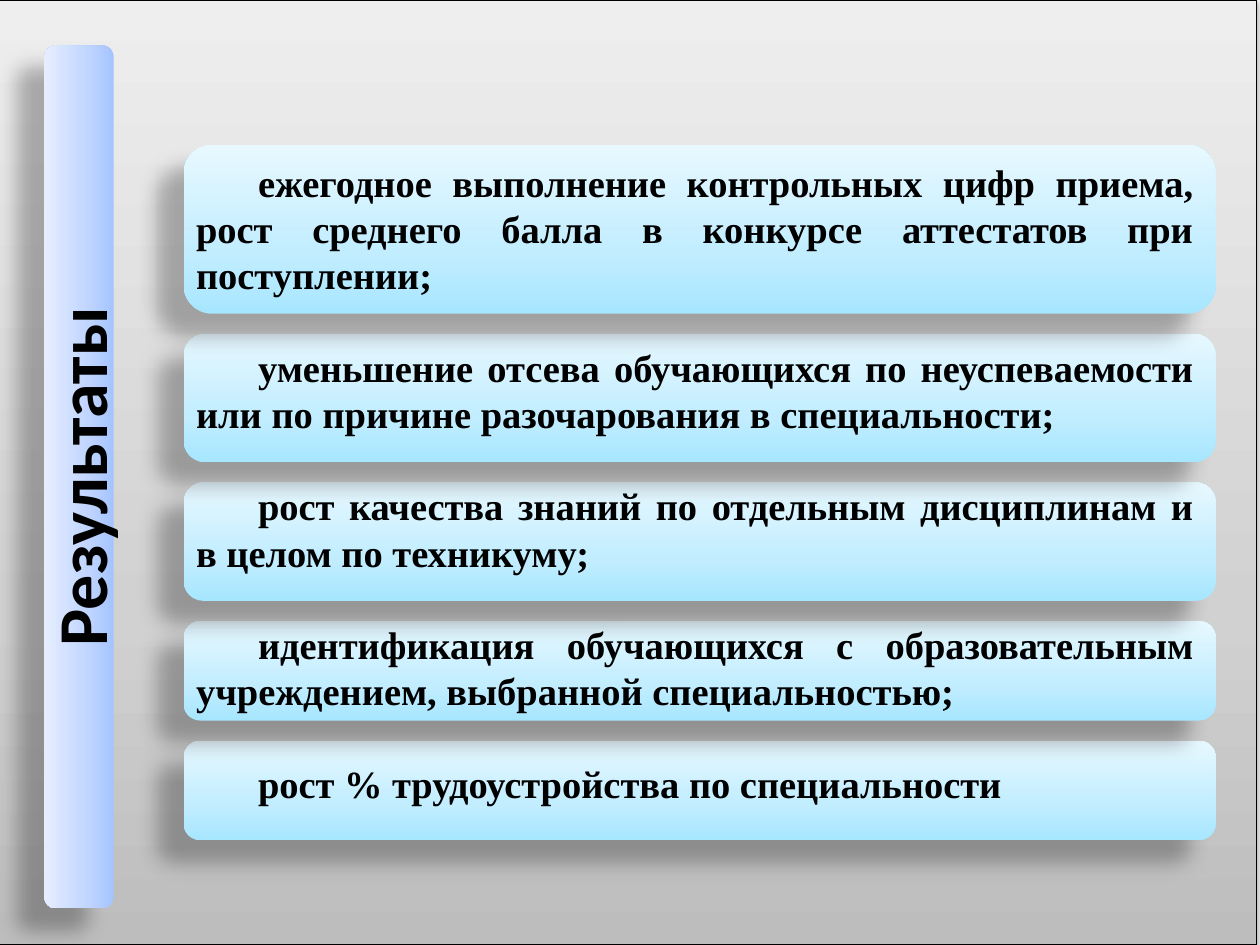
from itertools import accumulate

from lxml import etree
from pptx import Presentation
from pptx import util as u
from pptx.dml.color import RGBColor
from pptx.enum import shapes, text
from pptx.oxml import ns

COLORS = {
    "ink": "000000",
    "page": ("BDBDBD", "D1D1D1", "EEEEEE"),
    "card": ("A7E6FF", "C1EDFF", "E7F8FF"),
    "bar": ("A4C4FF", "BFD4FF", "E6EEFF"),
}
STOPS = (0, 35, 100)
SOFT_SHADOW = {"alpha": 38, "blur": 3.15, "dist": 1.57, "angle": 90}
DEEP_SHADOW = {"alpha": 28, "blur": 11.8, "dist": 19.7, "angle": 141}

TITLE = "Результаты"
RESULTS = (
    "ежегодное выполнение контрольных цифр приема, рост среднего балла "
    "в конкурсе аттестатов при поступлении;",
    "уменьшение отсева обучающихся по неуспеваемости или по причине "
    "разочарования в специальности;",
    "рост качества знаний по отдельным дисциплинам и в целом по техникуму;",
    "идентификация обучающихся с образовательным учреждением, "
    "выбранной специальностью;",
    "рост % трудоустройства по специальности",
)
CARD_LEFT, CARD_TOP, CARD_WIDTH, CARD_GAP = 105, 82.8, 589.7, 11.5
CARD_HEIGHTS = (96.5, 73.4, 67.7, 56.9, 56.9)
LINE_HEIGHT = 26.4


def child(parent, tag, **attributes):
    """Append a DrawingML element, writing each attribute as text."""
    node = etree.SubElement(parent, ns.qn(f"a:{tag}"))
    for name, value in attributes.items():
        node.set(name, str(value))
    return node


def apply_format(target, values):
    for name, value in values.items():
        setattr(target, name, value)


def fill_gradient(shape, colors):
    """Run the three colours from the bottom edge up."""
    gradient = child(shape.element.spPr, "gradFill", rotWithShape=1)
    stops = child(gradient, "gsLst")
    for position, color in zip(STOPS, colors):
        stop = child(stops, "gs", pos=position * 1000)
        child(stop, "srgbClr", val=color)
    child(gradient, "lin", ang=270 * 60000, scaled=0)


def cast_shadow(shape, shadow):
    shape.shadow.inherit = False
    effects = shape.element.spPr.find(ns.qn("a:effectLst"))
    outer = child(effects, "outerShdw",
                  blurRad=int(u.Pt(shadow["blur"])),
                  dist=int(u.Pt(shadow["dist"])),
                  dir=shadow["angle"] * 60000, rotWithShape=0)
    color = child(outer, "srgbClr", val=COLORS["ink"])
    child(color, "alpha", val=shadow["alpha"] * 1000)


def add_panel(page, kind, frame, colors, shadow):
    panel = page.shapes.add_shape(kind, *map(u.Pt, frame))
    fill_gradient(panel, colors)
    panel.line.fill.background()
    cast_shadow(panel, shadow)
    return panel


def write(para, content, font, size, alignment):
    para.alignment = alignment
    span = para.add_run()
    span.text = content
    apply_format(span.font, {"name": font, "size": u.Pt(size), "bold": True})
    span.font.color.rgb = RGBColor.from_string(COLORS["ink"])


def add_backdrop(page):
    backdrop = add_panel(page, shapes.MSO_SHAPE.RECTANGLE,
                         (-1.5, 0, 719.5, 540), COLORS["page"], SOFT_SHADOW)
    backdrop.line.color.rgb = RGBColor.from_string(COLORS["ink"])
    backdrop.line.width = u.Pt(0.75)


def add_cards(page):
    """Stack the cards with equal gaps, the lowest one at the back."""
    steps = (height + CARD_GAP for height in CARD_HEIGHTS[:-1])
    tops = accumulate(steps, initial=CARD_TOP)
    for top, height in reversed(list(zip(tops, CARD_HEIGHTS))):
        add_panel(page, shapes.MSO_SHAPE.ROUNDED_RECTANGLE,
                  (CARD_LEFT, top, CARD_WIDTH, height),
                  COLORS["card"], DEEP_SHADOW)


def add_title_bar(page):
    bar = add_panel(page, shapes.MSO_SHAPE.ROUNDED_RECTANGLE,
                    (-201.4, 252.7, 493.2, 39.6), COLORS["bar"], DEEP_SHADOW)
    bar.rotation = 270
    bar.text_frame.vertical_anchor = text.MSO_ANCHOR.MIDDLE
    write(bar.text_frame.paragraphs[0], TITLE, "Calibri", 40,
          text.PP_ALIGN.CENTER)


def add_results(page):
    box = page.shapes.add_textbox(*map(u.Pt, (CARD_LEFT, 85.7, 584, 380)))
    frame = box.text_frame
    apply_format(frame, {
        "word_wrap": True,
        "auto_size": text.MSO_AUTO_SIZE.SHAPE_TO_FIT_TEXT,
        "vertical_anchor": text.MSO_ANCHOR.MIDDLE,
    })
    for index, result in enumerate(RESULTS):
        para = frame.add_paragraph() if index else frame.paragraphs[0]
        write(para, result, "Times New Roman", 22, text.PP_ALIGN.JUSTIFY)
        apply_format(para, {
            "line_spacing": u.Pt(LINE_HEIGHT),
            "space_before": u.Pt(LINE_HEIGHT if index else 0),
        })
        para._p.get_or_add_pPr().set("indent", str(int(u.Pt(35.4))))


def main():
    deck = Presentation()
    apply_format(deck, {"slide_width": u.Pt(720), "slide_height": u.Pt(540)})
    page = deck.slides.add_slide(deck.slide_layouts[6])
    add_backdrop(page)
    add_cards(page)
    add_title_bar(page)
    add_results(page)
    deck.save("out.pptx")


if __name__ == "__main__":
    main()
